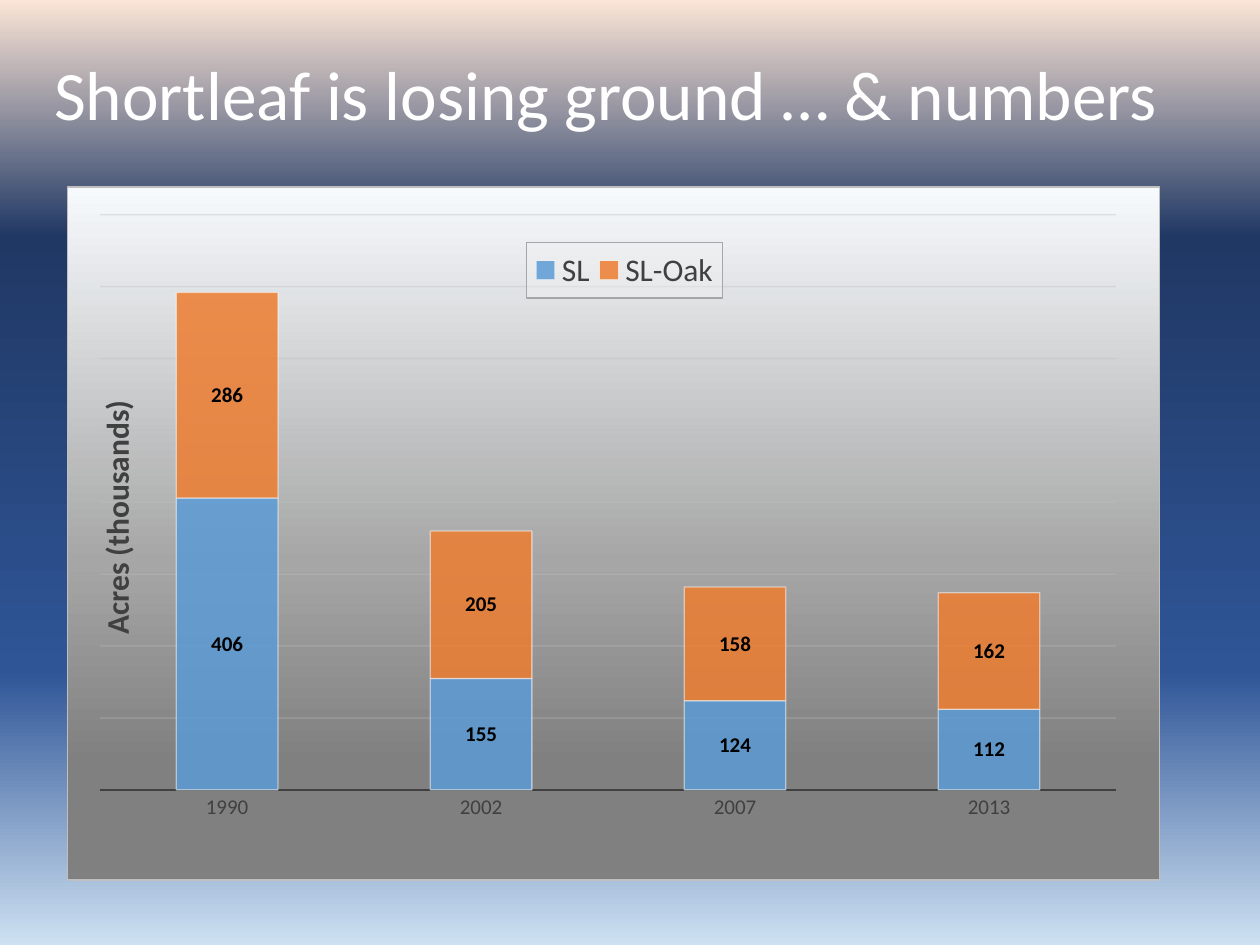
import pptx
import pptx.chart.data
import pptx.dml.color
import pptx.dml.fill
import pptx.dml.line
import pptx.enum.chart
import pptx.enum.text
import pptx.oxml
import pptx.oxml.ns
import pptx.util
from lxml import etree

Inches = pptx.util.Inches
Pt = pptx.util.Pt
RGB = pptx.dml.color.RGBColor.from_string
qn = pptx.oxml.ns.qn
FONT = "Calibri"
COLORS = {
    "white": "FFFFFF", "black": "000000", "text": "404040",
    "SL": "5B9BD5", "SL-Oak": "ED7D31",
    "border": "BFBFBF", "legend fill": "F2F2F2", "legend line": "A6A6A6",
}
PAGE_STOPS = [(0, "FBE5D6"), (25, "203864"), (71, "2F5597"), (100, "CEE1F2")]
CHART_STOPS = [(0, "F7FAFD"), (54, "A6A6A6"), (83, "808080")]


def set_alpha(parent, percent):
    for color in parent.iter(qn("a:srgbClr")):
        etree.SubElement(color, qn("a:alpha")).set("val", str(percent * 1000))


def place(parent, index, **settings):
    old = parent.find(qn("c:layout"))
    if old is not None:
        parent.remove(old)
    layout = pptx.oxml.parse_xml(f"<c:layout {pptx.oxml.ns.nsdecls('c')}/>")
    manual = etree.SubElement(layout, qn("c:manualLayout"))
    for name, value in settings.items():
        etree.SubElement(manual, qn(f"c:{name}")).set("val", str(value))
    parent.insert(index, layout)


deck = pptx.Presentation()
deck.slide_width, deck.slide_height = Inches(10), Inches(7.5)
page = deck.slides.add_slide(deck.slide_layouts[5])

title = page.shapes.title
title.left, title.top = Inches(0.33), Inches(0.15)
title.width, title.height = Inches(9.67), Inches(1.25)
title.text_frame.word_wrap = True
title.text_frame.vertical_anchor = pptx.enum.text.MSO_ANCHOR.MIDDLE
para = title.text_frame.paragraphs[0]
para.alignment = pptx.enum.text.PP_ALIGN.LEFT
para.line_spacing = 0.9
span = para.add_run()
span.text = "Shortleaf is losing ground … & numbers"
span.font.name, span.font.size = FONT, Pt(39.6)
span.font.color.rgb = RGB(COLORS["white"])

acres = pptx.chart.data.CategoryChartData()
acres.categories = ["1990", "2002", "2007", "2013"]
acres.add_series("SL", [406, 155, 124, 112])
acres.add_series("SL-Oak", [286, 205, 158, 162])
chart = page.shapes.add_chart(
    pptx.enum.chart.XL_CHART_TYPE.COLUMN_STACKED,
    Inches(0.53), Inches(1.48), Inches(8.68), Inches(5.51), acres).chart
chart.has_title = False
chart.font.name, chart.font.size = FONT, Pt(10)
chart.font.color.rgb = RGB(COLORS["white"])

area = pptx.oxml.parse_xml(f"<c:spPr {pptx.oxml.ns.nsdecls('c', 'a')}/>")
chart.element.find(qn("c:chart")).addnext(area)
area_fill = pptx.dml.fill.FillFormat.from_fill_parent(area)
for fill, stops in [(page.background.fill, PAGE_STOPS), (area_fill, CHART_STOPS)]:
    fill.gradient()
    fill.gradient_angle = 270
    stop_list = fill._xPr.find(qn("a:gradFill")).find(qn("a:gsLst"))
    for stop in list(stop_list):
        stop_list.remove(stop)
    for position, color in stops:
        stop = etree.SubElement(stop_list, qn("a:gs"))
        stop.set("pos", str(position * 1000))
        etree.SubElement(stop, qn("a:srgbClr")).set("val", color)
border = pptx.dml.line.LineFormat(area)
border.width = Pt(0.75)
border.color.rgb = RGB(COLORS["border"])

plot = chart.plots[0]
plot.gap_width, plot.overlap = 150, 100
plot.vary_by_categories = False
place(chart.element.find(f".//{qn('c:plotArea')}"), 0, layoutTarget="inner",
      xMode="edge", yMode="edge", x=0.03, y=0.04, w=0.93, h=0.83)
for series in plot.series:
    series.format.fill.solid()
    series.format.fill.fore_color.rgb = RGB(COLORS[series.name])
    set_alpha(series.format.fill._xPr, 85)
    series.format.line.width = Pt(0.75)
    series.format.line.color.rgb = RGB(COLORS["white"])
    set_alpha(series.format.line._ln, 50)
    labels = series.data_labels
    labels.show_value = True
    labels.position = pptx.enum.chart.XL_LABEL_POSITION.CENTER
    labels.font.name, labels.font.size, labels.font.bold = FONT, Pt(12), True
    labels.font.color.rgb = RGB(COLORS["black"])

years = chart.category_axis
years.major_tick_mark = pptx.enum.chart.XL_TICK_MARK.NONE
years.tick_labels.font.name, years.tick_labels.font.size = FONT, Pt(12)
years.tick_labels.font.color.rgb = RGB(COLORS["text"])
years.format.line.width = Pt(1.5)
years.format.line.color.rgb = RGB(COLORS["text"])

values = chart.value_axis
values.minimum_scale, values.maximum_scale, values.major_unit = 0, 800, 100
values.visible = False
values.has_major_gridlines = True
grid = values.major_gridlines.format.line
grid.width = Pt(0.75)
grid.color.rgb = RGB(COLORS["border"])
set_alpha(grid._ln, 40)
span = values.axis_title.text_frame.paragraphs[0].add_run()
span.text = "Acres (thousands)"
span.font.name, span.font.size, span.font.bold = FONT, Pt(18), True
span.font.color.rgb = RGB(COLORS["text"])
axis_title = values.axis_title._element
body = axis_title.find(f".//{qn('a:bodyPr')}")
body.set("rot", "-5400000")
body.set("vert", "horz")
place(axis_title, 1, xMode="edge", yMode="edge", x=0.02, y=0.3)

chart.has_legend = True
legend = chart.legend
legend.position = pptx.enum.chart.XL_LEGEND_POSITION.BOTTOM
legend.include_in_layout = False
legend.font.name, legend.font.size = FONT, Pt(18)
legend.font.color.rgb = RGB(COLORS["text"])
place(legend._element, 1, xMode="edge", yMode="edge", x=0.42, y=0.08, w=0.18, h=0.08)
legend_box = pptx.oxml.parse_xml(f"<c:spPr {pptx.oxml.ns.nsdecls('c', 'a')}/>")
legend._element.find(qn("c:txPr")).addprevious(legend_box)
legend_fill = pptx.dml.fill.FillFormat.from_fill_parent(legend_box)
legend_fill.solid()
legend_fill.fore_color.rgb = RGB(COLORS["legend fill"])
set_alpha(legend_box, 40)
legend_line = pptx.dml.line.LineFormat(legend_box)
legend_line.width = Pt(0.75)
legend_line.color.rgb = RGB(COLORS["legend line"])

deck.save("out.pptx")
